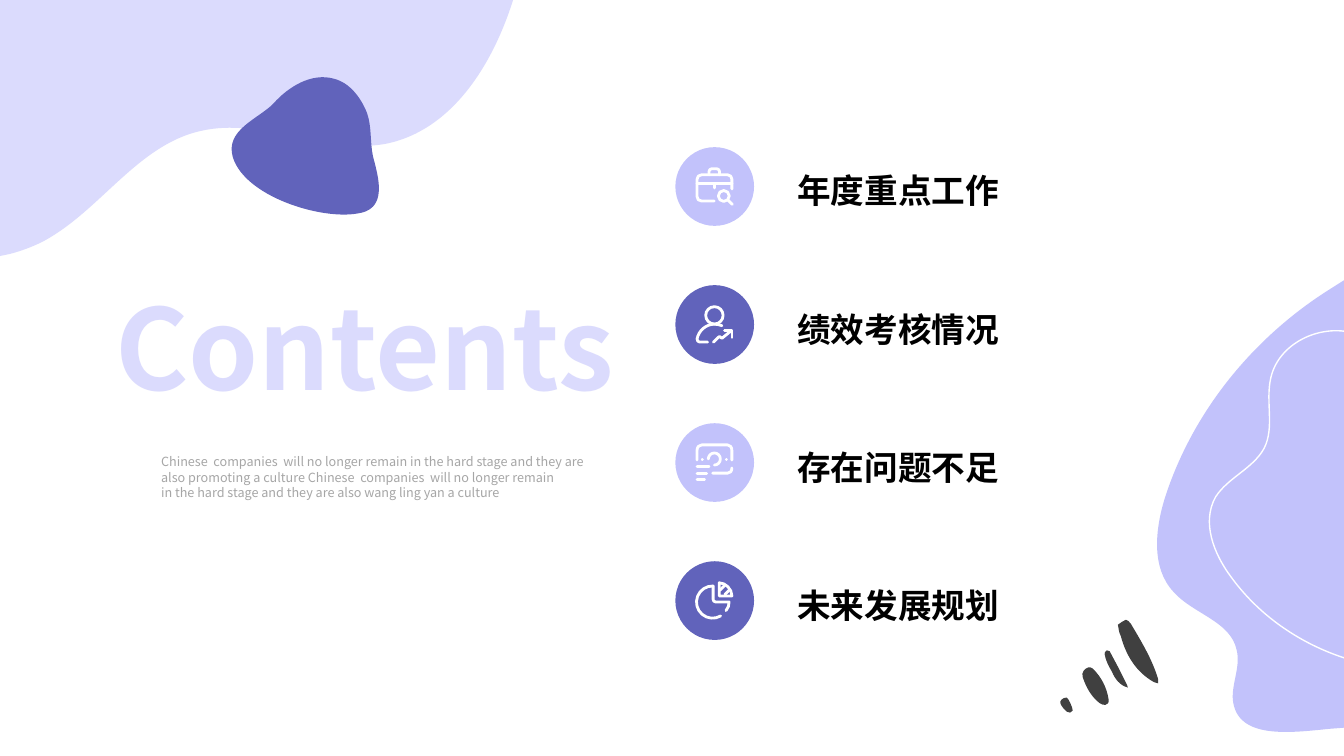
from math import ceil, cos, sin, tan, radians
from lxml.etree import SubElement
from pptx import Presentation
from pptx.dml.color import RGBColor as RGB
from pptx.enum.shapes import MSO_SHAPE as SHAPE
from pptx.enum.text import MSO_ANCHOR as ANCHOR, MSO_AUTO_SIZE as FIT, PP_ALIGN as ALIGN
from pptx.oxml.ns import qn
from pptx.util import Pt

HUES = {"pale": "DBDBFD", "lilac": "C2C2FB", "deep": "6163BB", "ink": "404040",
        "grey": "A6A6A6", "white": "FFFFFF", "black": "000000"}
FONT = "Noto Sans CJK SC"


def pairs(seg):
    return list(zip(seg[::2], seg[1::2]))


def ring(x, y, r, start=0, end=360):
    """Give an arc as curves of at most a quarter turn."""
    count = ceil(abs(end - start) / 90)
    step = radians(end - start) / count
    pull = 4 / 3 * tan(step / 4)
    a = radians(start)
    path = [(x + r * cos(a), y + r * sin(a))]
    for _ in range(count):
        b = a + step
        path.append((x + r * (cos(a) - pull * sin(a)), y + r * (sin(a) + pull * cos(a)),
                     x + r * (cos(b) + pull * sin(b)), y + r * (sin(b) - pull * cos(b)),
                     x + r * cos(b), y + r * sin(b)))
        a = b
    return path


def bend(shape, paths, close):
    """Join each three points of a curve into one Bezier segment."""
    outline = next(shape._element.iter(qn("a:path")))
    nodes = iter(list(outline))
    for path in paths:
        next(nodes)
        for seg in path[1:]:
            group = [next(nodes) for _ in pairs(seg)]
            if len(group) == 3:
                curve = outline.makeelement(qn("a:cubicBezTo"))
                group[0].addprevious(curve)
                for node in group:
                    curve.append(node[0])
                    outline.remove(node)
        if close:
            next(nodes)


def draw(slide, paths, fill=None, line=None, width=1, left=0, top=0, close=True):
    """Draw paths where a pair is a line and six numbers are a curve."""
    lines = [[(Pt(left + x), Pt(top + y)) for seg in p for x, y in pairs(seg)] for p in paths]
    pen = slide.shapes.build_freeform(*lines[0][0])
    for i, pts in enumerate(lines):
        if i:
            pen.move_to(*pts[0])
        pen.add_line_segments(pts[1:], close=close)
    shape = pen.convert_to_shape()
    bend(shape, paths, close)
    return paint(shape, fill, line, width)


def paint(shape, fill=None, line=None, width=1):
    shape.shadow.inherit = False
    if fill:
        shape.fill.solid()
        shape.fill.fore_color.rgb = RGB.from_string(HUES[fill])
    else:
        shape.fill.background()
    if line:
        shape.line.color.rgb = RGB.from_string(HUES[line])
        shape.line.width = Pt(width)
    else:
        shape.line.fill.background()
    return shape


def write(shape, lines, size, hue, bold=False, space=None, anchor=ANCHOR.TOP):
    frame = shape.text_frame
    frame.text = "\n".join(lines)
    frame.word_wrap, frame.auto_size = True, FIT.NONE
    frame.vertical_anchor = anchor
    for par in frame.paragraphs:
        par.alignment = ALIGN.LEFT
        font = par.font
        font.name, font.size, font.bold = FONT, Pt(size), bold
        font.color.rgb = RGB.from_string(HUES[hue])
        if space:
            par.line_spacing = Pt(space)
        # East Asian glyphs use the same face
        for run in par.runs:
            SubElement(run.font._element, qn("a:ea"), typeface=FONT)


# Background blobs
WAVE = [(0, 0), (366.5, 0), (365.8, 2.2), (350.6, 49, 321.1, 94.3, 274.3, 103),
        (231.1, 110.2, 186.5, 83.5, 143.3, 93.6), (97.9, 103.7, 71.3, 151.2, 30.2, 172.8),
        (23, 176.4, 15.1, 179.3, 7.2, 181.4), (0, 182.9)]
STONE = [(266.4, 147.6), (274.3, 139, 269.3, 123.1, 266.4, 111.6),
         (264.2, 101.5, 265.7, 90.7, 262.1, 80.6), (257.8, 69.8, 249.8, 59, 238.3, 56.2),
         (222.5, 51.8, 205.9, 61.9, 195.1, 74.2), (184.3, 85, 160.6, 92.9, 166.3, 112.3),
         (175, 140.4, 229, 157, 254.9, 152.6), (259.9, 151.9, 263.5, 150.5, 266.4, 147.6)]
HILL = [(960, 200.2), (960, 519.8), (949.7, 520.6), (921.6, 523.4, 883.4, 528.5, 880.6, 499.7),
        (879.8, 488.2, 886.3, 475.9, 883.4, 464.4), (879.1, 443.5, 851.8, 438.5, 838.1, 422.6),
        (822.2, 405.4, 825.1, 378, 832.3, 355), (851.8, 295.2, 892.8, 244.1, 945.4, 209.5)]
LOOP = [(879.1, 411.8), (918, 465.8, 992.2, 491, 1056.2, 472.3),
        (1069.9, 468.7, 1084.3, 461.5, 1087.9, 447.8),
        (1091.5, 435.6, 1084.3, 419.8, 1093.7, 411.1),
        (1098.7, 406.1, 1106.6, 405.4, 1112.4, 401),
        (1130.4, 386.6, 1097.3, 360.7, 1092.2, 348.5),
        (1087.9, 337.7, 1085.8, 326.2, 1087.9, 314.6),
        (1090.1, 298.1, 1100.2, 280.8, 1093, 265.7), (1086.5, 249.1, 1066.3, 244.1, 1049, 245.5),
        (1031.8, 246.2, 1014.5, 251.3, 997.9, 248.4), (986.4, 245.5, 976.3, 239.8, 965.5, 237.6),
        (941.8, 231.8, 913.7, 245.5, 907.9, 269.3), (903.6, 286.6, 910.8, 305.3, 902.9, 320.4),
        (895, 334.8, 877, 341.3, 868.3, 355), (858.2, 373, 866.9, 395.3, 879.1, 411.8)]

# Brush dashes: centre of turn, then outline
DASHES = [
    ((813.2, 464.8), [
        (798.5, 446.4), (800.6, 445, 802.1, 443.5, 804.2, 442.8),
        (805, 442.8, 807.1, 444.2, 807.8, 445.7), (815, 457.9, 823, 470.9, 827.3, 485.3),
        (827.3, 488.2), (824.4, 487.4),
        (811.4, 480.2, 804.2, 468, 800.6, 454.3), (799.2, 452.2, 799.2, 449.3, 798.5, 446.4)]),
    ((783.4, 490), [
        (787.7, 503.3), (786.2, 502.6, 784.8, 501.8, 783.4, 500.4),
        (778.3, 495.4, 775.4, 489.6, 773.3, 483.1), (772.6, 480.2, 774.7, 477.4, 777.6, 476.6),
        (778.3, 476.6, 779.8, 476.6, 780.5, 477.4), (787, 483.8, 790.6, 491, 792, 499.7),
        (792.7, 501.8, 790.6, 504, 787.7, 503.3)]),
    ((797.8, 477.7), [
        (805.7, 491), (799.9, 489.6, 796.3, 484.6, 794.2, 479.5),
        (792, 475.9, 789.8, 471.6, 789.1, 467.3), (788.4, 466.6, 789.8, 465.1, 790.6, 464.4),
        (792.7, 465.1), (799.2, 477.4), (805, 488.9)]),
    ((761.8, 503.3), [
        (766.1, 507.6), (765.4, 509, 763.2, 509.8, 761.8, 508.3),
        (760.3, 506.9, 758.2, 504.7, 757.4, 502.6), (756.7, 501.8, 757.4, 500.4, 758.2, 499.7),
        (758.9, 499, 760.3, 498.2, 761.8, 498.2), (763.2, 499, 766.1, 505.4, 766.1, 507.6)])]

# Icon strokes, within a box of 27 points
CASE = [[(26, 15.5), (26, 8.6), (26, 6.8, 24.8, 5.4, 23, 5.4), (4.3, 5.4),
         (2.3, 5.4, 1.1, 6.8, 1.1, 8.6), (1.1, 20.9), (1.1, 22.8, 2.3, 24.1, 4.3, 24.1),
         (13.4, 24.1)],
        [(1.1, 11.9), (26, 11.9)], [(13.3, 11.9), (13.3, 14.8)],
        [(9.7, 5.4), (9.7, 2.9), (9.7, 1.9, 10.5, 1.1, 11.5, 1.1), (15.3, 1.1),
         (16.3, 1.1, 17.1, 1.9, 17.1, 2.9), (17.1, 5.4)],
        ring(20.2, 20.5, 3.9), [(23.2, 23.4), (26.3, 26.5)]]
USER = [ring(13.5, 7.2, 6.2),
        [(8.6, 26.3), (3, 26.3), (2, 26.3, 0.9, 25.2, 1.1, 24),
         (2.2, 18.2, 7.5, 13.6, 13.3, 13.5), (15.2, 13.5, 17, 13.9, 18.9, 14.6)],
        [(12.8, 26.4), (16.3, 22.9), (17.2, 22.3), (18.9, 23.6), (25.5, 18.2)],
        [(20.7, 17.8), (26.1, 17.8), (26.1, 23)]]
BOARD = [[(1.1, 11.9), (1.1, 5), (1.1, 2.7, 2.7, 1.1, 4.5, 1.1), (22.8, 1.1),
          (24.6, 1.1, 26, 2.7, 26, 5), (26, 11.9)],
         [(26, 17.6), (26, 20, 24.8, 21.3, 23, 21.3), (12.2, 21.3)],
         ring(13.5, 11.2, 4.3, 180, 450),
         [(4.8, 11.3), (5, 11.3)], [(22, 11.3), (22.2, 11.3)],
         [(1.1, 16.6), (9.7, 16.6)], [(1.1, 21.3), (8, 21.3)], [(1.1, 26.1), (6.5, 26.1)]]
CHART = [[(21.8, 20.9), (23.4, 19, 24, 17, 24, 14.7), (14.4, 14.7),
          (13.4, 14.7, 12.6, 14, 12.6, 13), (12.6, 3.3)],
         ring(12.2, 14.8, 11.5, 272, 60),
         [(16.9, 1), (16.9, 10.4), (26, 10.4), (26, 5.5, 21.5, 1, 16.9, 1)],
         [(17.3, 6.5), (20.5, 3.2)], [(20.9, 9.4), (24.5, 5.9)]]

TOPICS = [("年度重点工作", CASE, "lilac"), ("绩效考核情况", USER, "deep"),
          ("存在问题不足", BOARD, "lilac"), ("未来发展规划", CHART, "deep")]
BLURB = ["Chinese  companies  will no longer remain in the hard stage and they are also "
         "promoting a culture Chinese  companies  will no longer remain",
         "in the hard stage and they are also wang ling yan a culture"]


def spin(seg, cx, cy, turn):
    return tuple(v for x, y in pairs(seg) for v in (
        cx + (x - cx) * cos(turn) - (y - cy) * sin(turn),
        cy + (x - cx) * sin(turn) + (y - cy) * cos(turn)))


def decor(slide):
    for path, hue in ((WAVE, "pale"), (STONE, "deep"), (HILL, "lilac")):
        draw(slide, [path], hue)
    draw(slide, [LOOP], line="white")
    for (cx, cy), path in DASHES:
        flat = [spin(seg, cx, cy, radians(-15)) for seg in path]
        draw(slide, [flat], "ink").rotation = 15


def heading(slide, left, top, width):
    title = slide.shapes.title
    title.left, title.top, title.width, title.height = map(Pt, (left, top, width, 123))
    write(title, ["Contents"], 80, "pale", True)
    blurb = slide.shapes.add_textbox(Pt(left + 33), Pt(top + 126), Pt(322), Pt(40.3))
    write(blurb, BLURB, 9, "grey", space=10.8)


def topic(slide, left, top, name, icon, hue):
    disc = slide.shapes.add_shape(SHAPE.FLOWCHART_CONNECTOR, Pt(left), Pt(top), Pt(56.2), Pt(56.2))
    paint(disc, hue)
    mark = draw(slide, icon, None, "white", 2, left + 14.4, top + 14.4, close=False)
    edge = mark.line._get_or_add_ln()
    edge.set("cap", "rnd")
    SubElement(edge, qn("a:round"))
    label = slide.shapes.add_textbox(Pt(left + 80), Pt(top + 13), Pt(180), Pt(36))
    write(label, [name], 24, "black", True, anchor=ANCHOR.MIDDLE)


def main():
    deck = Presentation()
    deck.slide_width, deck.slide_height = Pt(960), Pt(540)
    slide = deck.slides.add_slide(deck.slide_layouts[5])
    decor(slide)
    heading(slide, 75, 195, 390)
    for i, item in enumerate(TOPICS):
        topic(slide, 482.4, 105.1 + i * 98.6, *item)
    deck.save("out.pptx")


if __name__ == "__main__":
    main()
